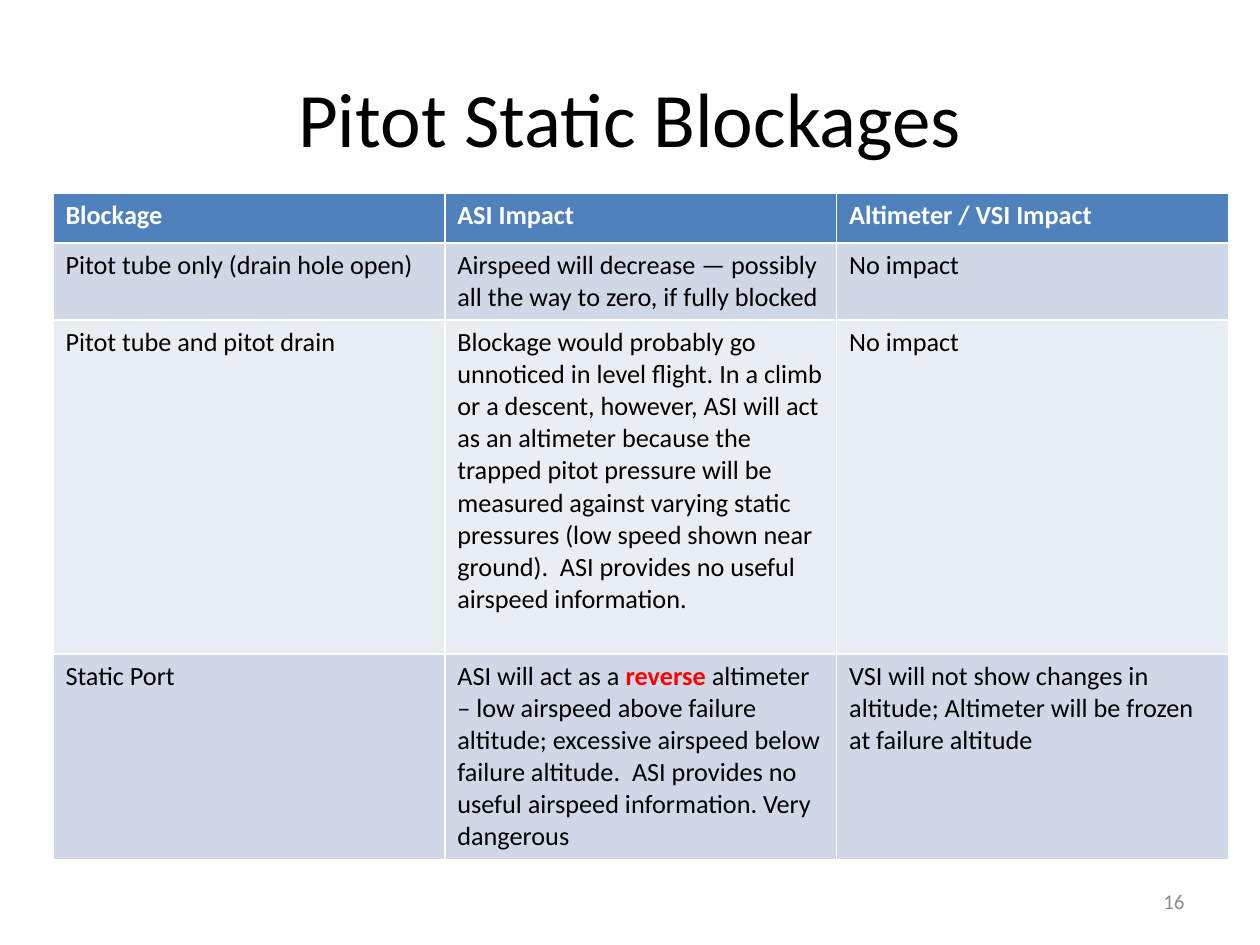
from pptx import Presentation
from pptx import util as u
from pptx.dml.color import RGBColor
from pptx.enum import text

BLACK = RGBColor(0x00, 0x00, 0x00)
WHITE = RGBColor(0xFF, 0xFF, 0xFF)
RED = RGBColor(0xFF, 0x00, 0x00)
GREY = RGBColor(0x8C, 0x8C, 0x8C)
HEADER_BLUE = RGBColor(0x4F, 0x81, 0xBD)
BAND_DARK = RGBColor(0xD0, 0xD8, 0xE8)
BAND_LIGHT = RGBColor(0xE9, 0xED, 0xF4)

ROW_HEIGHTS = [0.4, 0.61, 2.65, 1.63]
COLUMN_WIDTH = 3.11
EMPHASIS = "reverse "

ROWS = [
    ["Blockage", "ASI Impact", "Altimeter / VSI Impact"],
    ["Pitot tube only (drain hole open)",
     "Airspeed will decrease — possibly all the way to zero, if fully blocked",
     "No impact"],
    ["Pitot tube and pitot drain",
     "Blockage would probably go unnoticed in level flight. In a climb or a "
     "descent, however, ASI will act as an altimeter because the trapped pitot "
     "pressure will be measured against varying static pressures (low speed "
     "shown near ground).  ASI provides no useful airspeed information.",
     "No impact"],
    ["Static Port",
     ["ASI will act as a ", EMPHASIS,
      "altimeter – low airspeed above failure altitude; excessive airspeed "
      "below failure altitude.  ASI provides no useful airspeed information. "
      "Very dangerous"],
     "VSI will not show changes in altitude; Altimeter will be frozen at "
     "failure altitude"],
]


def add_run(paragraph, words, size, color, bold=False):
    run = paragraph.add_run()
    run.text = words
    run.font.name = "Calibri"
    run.font.size = u.Pt(size)
    run.font.bold = bold
    run.font.color.rgb = color


def place(shape, left, top, width, height):
    shape.left, shape.top = u.Inches(left), u.Inches(top)
    shape.width, shape.height = u.Inches(width), u.Inches(height)


presentation = Presentation()
presentation.slide_width = u.Inches(10)
presentation.slide_height = u.Inches(7.5)
slide = presentation.slides.add_slide(presentation.slide_layouts[5])

# Title
title = slide.shapes.title
place(title, 0.5, 0.3, 9, 1.25)
title.text_frame.vertical_anchor = text.MSO_ANCHOR.MIDDLE
paragraph = title.text_frame.paragraphs[0]
paragraph.alignment = text.PP_ALIGN.CENTER
add_run(paragraph, "Pitot Static Blockages", 44, BLACK)

# Slide number
number = slide.shapes.add_textbox(0, 0, 0, 0)
place(number, 7.17, 6.95, 2.33, 0.4)
number.text_frame.word_wrap = True
number.text_frame.vertical_anchor = text.MSO_ANCHOR.MIDDLE
paragraph = number.text_frame.paragraphs[0]
paragraph.alignment = text.PP_ALIGN.RIGHT
add_run(paragraph, "16", 12, GREY)

# Blockage table; the default table style supplies the white rules
table = slide.shapes.add_table(
    len(ROWS), len(ROWS[0]), u.Inches(0.42), u.Inches(1.53),
    u.Inches(COLUMN_WIDTH * len(ROWS[0])), u.Inches(sum(ROW_HEIGHTS))).table
for column in table.columns:
    column.width = u.Inches(COLUMN_WIDTH)

for row_index, (height, entries) in enumerate(zip(ROW_HEIGHTS, ROWS)):
    table.rows[row_index].height = u.Inches(height)
    is_header = row_index == 0
    band = BAND_DARK if row_index % 2 else BAND_LIGHT
    for column_index, entry in enumerate(entries):
        cell = table.cell(row_index, column_index)
        cell.fill.solid()
        cell.fill.fore_color.rgb = HEADER_BLUE if is_header else band
        paragraph = cell.text_frame.paragraphs[0]
        for words in [entry] if isinstance(entry, str) else entry:
            emphasised = words == EMPHASIS
            color = WHITE if is_header else RED if emphasised else BLACK
            add_run(paragraph, words, 15, color, is_header or emphasised)

presentation.save("out.pptx")
